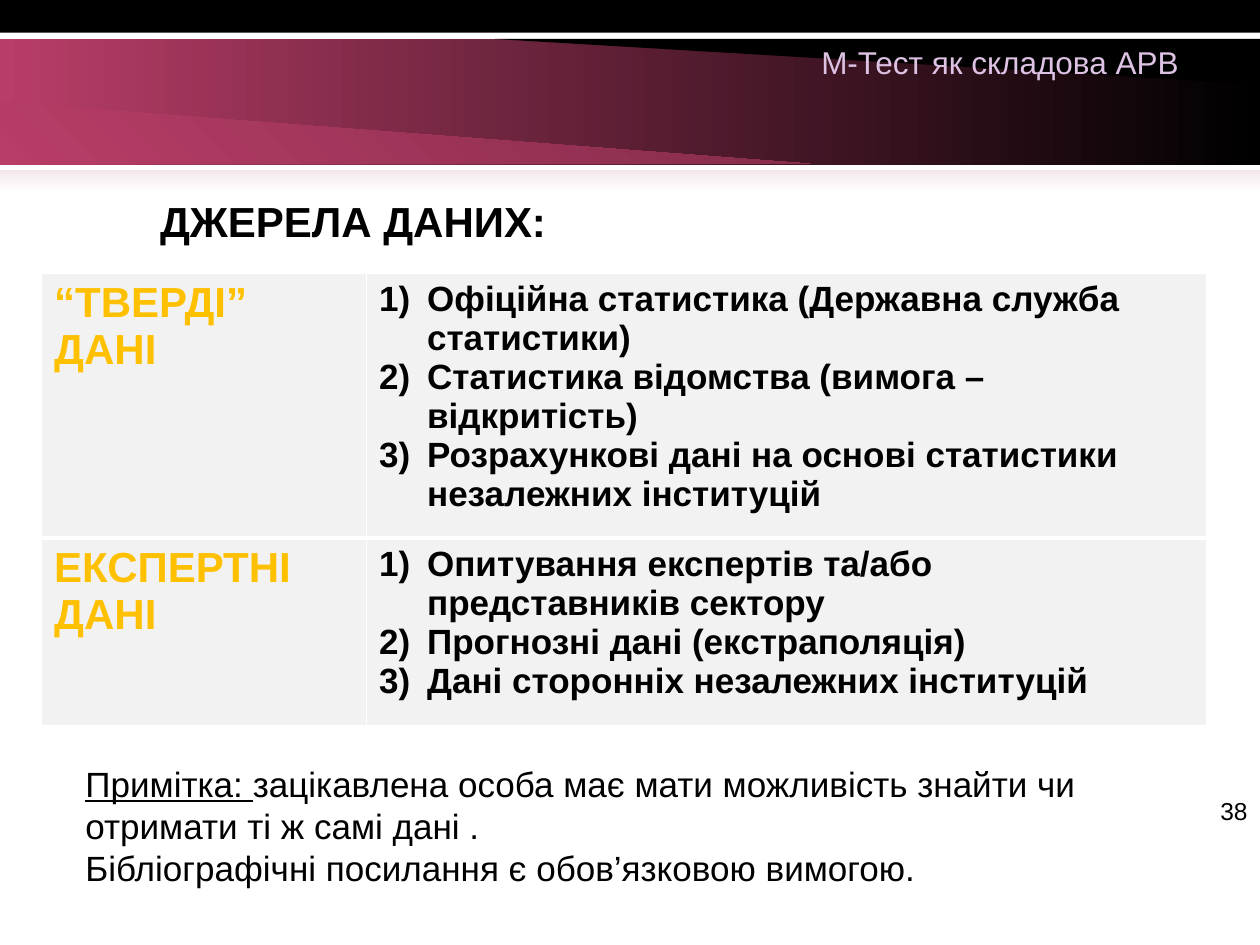
import dataclasses

import pptx
import pptx.dml.color
import pptx.enum.dml
import pptx.enum.text
import pptx.oxml
import pptx.oxml.ns
import pptx.util
from pptx.util import Inches

ALIGN = pptx.enum.text.PP_ALIGN
FIT = pptx.enum.text.MSO_AUTO_SIZE


@dataclasses.dataclass(frozen=True)
class Theme:
    font: str = "Arial"
    ink: str = "000000"
    paper: str = "FFFFFF"
    berry: str = "B83D68"
    plum: str = "842C4A"
    blush: str = "F4E7ED"
    lilac: str = "DEC2E4"
    gold: str = "FFC000"
    cell: str = "F2F2F2"
    heading: int = 24
    body: int = 20
    header: int = 18
    number: int = 14


THEME = Theme()
SOURCES = [
    ("“ТВЕРДІ” ДАНІ", [
        "Офіційна статистика (Державна служба статистики)",
        "Статистика відомства (вимога – відкритість)",
        "Розрахункові дані на основі статистики незалежних інституцій",
    ]),
    ("ЕКСПЕРТНІ ДАНІ", [
        "Опитування експертів та/або представників сектору",
        "Прогнозні дані (екстраполяція)",
        "Дані сторонніх незалежних інституцій",
    ]),
]
NOTE = [
    [("Примітка: ", True),
     ("зацікавлена особа має мати можливість знайти чи отримати ті ж самі дані .", False)],
    [("Бібліографічні посилання є обов’язковою вимогою.", False)],
]


def rgb(value):
    return pptx.dml.color.RGBColor.from_string(value)


def apply(target, formats):
    for name, value in formats.items():
        setattr(target, name, value)


def add_span(para, text, size, color, **formats):
    span = para.add_run()
    span.text = text
    span.font.color.rgb = rgb(color)
    apply(span.font, {"name": THEME.font, "size": pptx.util.Pt(size), **formats})


def paint(shape, colors, angle=0):
    """Fill with one colour, or with a gradient turned clockwise by angle."""
    shape.shadow.inherit = False
    shape.line.fill.background()
    if len(colors) == 1:
        shape.fill.solid()
        shape.fill.fore_color.rgb = rgb(colors[0])
        return
    shape.fill.gradient()
    shape.fill.gradient_angle = -angle % 360
    for stop, color, position in zip(shape.fill.gradient_stops, colors, (0, 1)):
        stop.color.rgb = rgb(color)
        stop.position = position


def add_bar(page, box, colors, angle=0):
    bar = page.shapes.add_shape(pptx.enum.shapes.MSO_SHAPE.RECTANGLE, *box)
    paint(bar, colors, angle)


def add_wedge(page, box, points, colors, angle=0):
    """Draw an outline from points given as lengths from the box's corner."""
    left, top = box[:2]
    corners = [(left + Inches(x), top + Inches(y)) for x, y in points]
    builder = page.shapes.build_freeform(*corners[0], scale=1.0)
    builder.add_line_segments(corners[1:], close=True)
    paint(builder.convert_to_shape(), colors, angle)


def add_banner(page, box):
    left, top, width, height = box
    band_top = top + Inches(0.31)
    band = (left, band_top, width, Inches(1))
    add_bar(page, band, [THEME.berry, THEME.ink])
    add_wedge(page, band, [(9.82, 0), (3.93, 0), (10, 0.36), (10, 0)], [THEME.ink])
    add_wedge(page, band, [(0.19, 0.99), (6.43, 0.99), (0, 0.5), (0, 0.99)],
              [THEME.berry, THEME.plum], 315)
    add_bar(page, (left, top, width, Inches(0.26)), [THEME.ink])
    glow = Inches(0.17)
    add_bar(page, (left, top + height - glow, width, glow),
            [THEME.blush, THEME.paper], 90)


def add_text_frame(page, box, **formats):
    frame = page.shapes.add_textbox(*box).text_frame
    apply(frame, {"word_wrap": True, **formats})
    return frame


def add_label(page, box, text, size, color, align, **formats):
    para = add_text_frame(page, box, **formats).paragraphs[0]
    para.alignment = align
    add_span(para, text, size, color)


def set_title(page, box, text):
    title = page.shapes.title
    apply(title, dict(zip(("left", "top", "width", "height"), box)))
    apply(title.text_frame, {
        "word_wrap": True,
        "auto_size": FIT.SHAPE_TO_FIT_TEXT,
        "vertical_anchor": pptx.enum.text.MSO_ANCHOR.TOP,
    })
    para = title.text_frame.paragraphs[0]
    para.alignment = ALIGN.LEFT
    add_span(para, text, THEME.heading, THEME.ink, bold=True)


def number_paragraph(para):
    props = para._p.get_or_add_pPr()
    indent = Inches(0.38)
    props.set("marL", str(indent))
    props.set("indent", str(-indent))
    props.append(pptx.oxml.parse_xml(
        f'<a:buAutoNum {pptx.oxml.ns.nsdecls("a")} type="arabicParenR"/>'))


def style_cell(cell, top, bottom):
    cell.fill.solid()
    cell.fill.fore_color.rgb = rgb(THEME.cell)
    widths = {"lnL": 1, "lnR": 1, "lnT": top, "lnB": bottom}
    for index, (edge, width) in enumerate(widths.items()):
        cell._tc.get_or_add_tcPr().insert(index, pptx.oxml.parse_xml(
            f'<a:{edge} {pptx.oxml.ns.nsdecls("a")} w="{pptx.util.Pt(width)}">'
            f'<a:solidFill><a:srgbClr val="{THEME.paper}"/></a:solidFill></a:{edge}>'))


def add_sources_table(page, box):
    table = page.shapes.add_table(len(SOURCES), 2, *box).table
    apply(table, {"first_row": False, "horz_banding": False})
    label_width = Inches(2.58)
    table.columns[0].width = label_width
    table.columns[1].width = box[2] - label_width
    first_height = Inches(2.1)
    table.rows[0].height = first_height
    table.rows[1].height = box[3] - first_height
    for row, (label, items) in enumerate(SOURCES):
        name, details = table.cell(row, 0), table.cell(row, 1)
        for cell in (name, details):
            style_cell(cell, top=3 if row else 1, bottom=1 if row else 3)
        add_span(name.text_frame.paragraphs[0], label, THEME.heading, THEME.gold, bold=True)
        frame = details.text_frame
        for index, item in enumerate(items):
            para = frame.add_paragraph() if index else frame.paragraphs[0]
            number_paragraph(para)
            add_span(para, item, THEME.body, THEME.ink, bold=True)


def add_note(page, box):
    frame = add_text_frame(page, box, auto_size=FIT.SHAPE_TO_FIT_TEXT)
    for index, spans in enumerate(NOTE):
        para = frame.add_paragraph() if index else frame.paragraphs[0]
        for text, underline in spans:
            add_span(para, text, THEME.body, THEME.ink, underline=underline)


def main():
    deck = pptx.Presentation()
    apply(deck, {"slide_width": Inches(10), "slide_height": Inches(7.5)})
    page = deck.slides.add_slide(deck.slide_layouts.get_by_name("Title Only"))

    def area(*lengths):
        return tuple(Inches(length) for length in lengths)

    add_banner(page, area(0, 0, 10, 1.52))
    add_label(page, area(9.33, 6.27, 0.67, 0.57), "38", THEME.number, THEME.ink, ALIGN.RIGHT)
    add_label(page, area(6.42, 0.29, 3.07, 0.4), "М-Тест як складова АРВ", THEME.header,
              THEME.lilac, ALIGN.LEFT, word_wrap=False, auto_size=FIT.SHAPE_TO_FIT_TEXT)
    set_title(page, area(1.17, 1.5, 7.75, 0.5), "ДЖЕРЕЛА ДАНИХ:")
    add_sources_table(page, area(0.33, 2.17, 9.25, 3.59))
    add_note(page, area(0.58, 6, 9, 1.11))
    deck.save("out.pptx")


if __name__ == "__main__":
    main()
